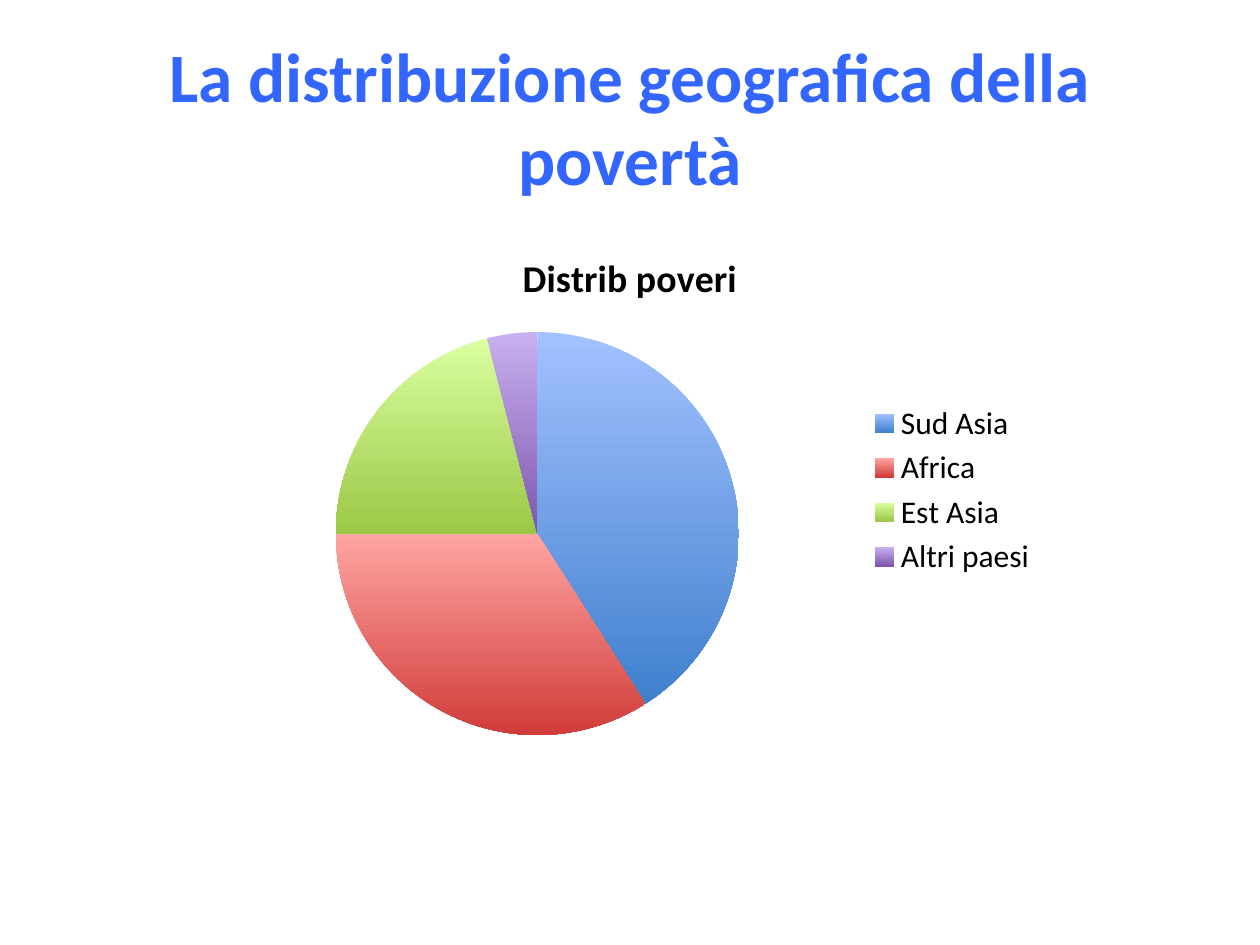
from pptx import Presentation
from pptx import util as u
from pptx.chart import data as cd
from pptx.dml.color import RGBColor
from pptx.enum import chart as ch, text as tx

HEAD = "La distribuzione geografica della povertà"
NAME = "Distrib poveri"
SHARES = [
    ("Sud Asia", 41, ("A3C1FF", "3F80CD")),
    ("Africa", 34, ("FFA5A3", "D03C39")),
    ("Est Asia", 21, ("D9FFA0", "9CC746")),
    ("Altri paesi", 4, ("C8B0F0", "7E57AC")),
]
THEME = {
    "font": "Calibri",
    "head": ("3366FF", 39.6),
    "name": ("000000", 21.6),
    "body": ("000000", 18),
}
SIZE = (720, 540)
HEAD_BOX = (36, 21.6, 648, 90)
PIE_BOX = (120, 130, 480, 300)


def pts(box):
    return [u.Pt(n) for n in box]


def style(font, role, bold):
    tint, size = THEME[role]
    font.name = THEME["font"]
    font.size = u.Pt(size)
    font.bold = bold
    font.color.rgb = RGBColor.from_string(tint)


def add_head(slide):
    head = slide.shapes.title
    head.left, head.top, head.width, head.height = pts(HEAD_BOX)
    frame = head.text_frame
    frame.text = HEAD
    frame.word_wrap = True
    frame.auto_size = tx.MSO_AUTO_SIZE.NONE
    frame.vertical_anchor = tx.MSO_ANCHOR.MIDDLE
    para = frame.paragraphs[0]
    para.alignment = tx.PP_ALIGN.CENTER
    style(para.runs[0].font, "head", True)


def add_pie(slide):
    data = cd.CategoryChartData()
    data.categories = [name for name, _, _ in SHARES]
    data.add_series(NAME, [share for _, share, _ in SHARES])
    pie = slide.shapes.add_chart(
        ch.XL_CHART_TYPE.PIE, *pts(PIE_BOX), data).chart
    style(pie.font, "body", False)

    pie.has_title = True
    frame = pie.chart_title.text_frame
    frame.text = NAME
    style(frame.paragraphs[0].runs[0].font, "name", True)
    pie.chart_title.include_in_layout = False

    pie.has_legend = True
    pie.legend.position = ch.XL_LEGEND_POSITION.RIGHT
    pie.legend.include_in_layout = False
    style(pie.legend.font, "body", False)

    plot = pie.plots[0]
    plot.vary_by_categories = True
    for i, (_, _, tints) in enumerate(SHARES):
        form = plot.series[0].points[i].format
        form.line.fill.background()
        form.fill.gradient()
        form.fill.gradient_angle = 270
        for stop, tint, place in zip(form.fill.gradient_stops, tints, (0, 1)):
            stop.color.rgb = RGBColor.from_string(tint)
            stop.position = place


def main():
    deck = Presentation()
    deck.slide_width, deck.slide_height = pts(SIZE)
    slide = deck.slides.add_slide(deck.slide_layouts[5])
    add_head(slide)
    add_pie(slide)
    deck.save("out.pptx")


if __name__ == "__main__":
    main()
